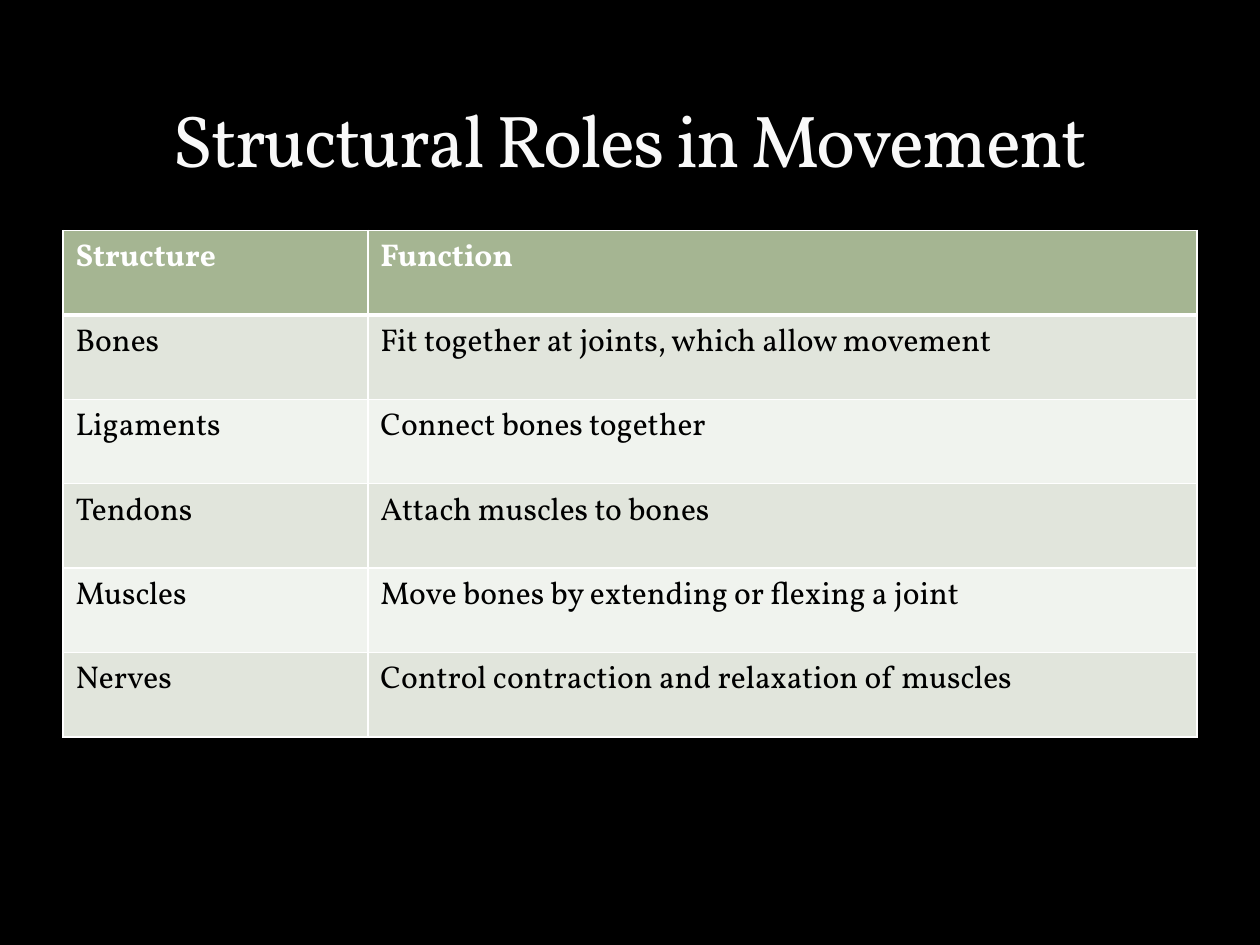
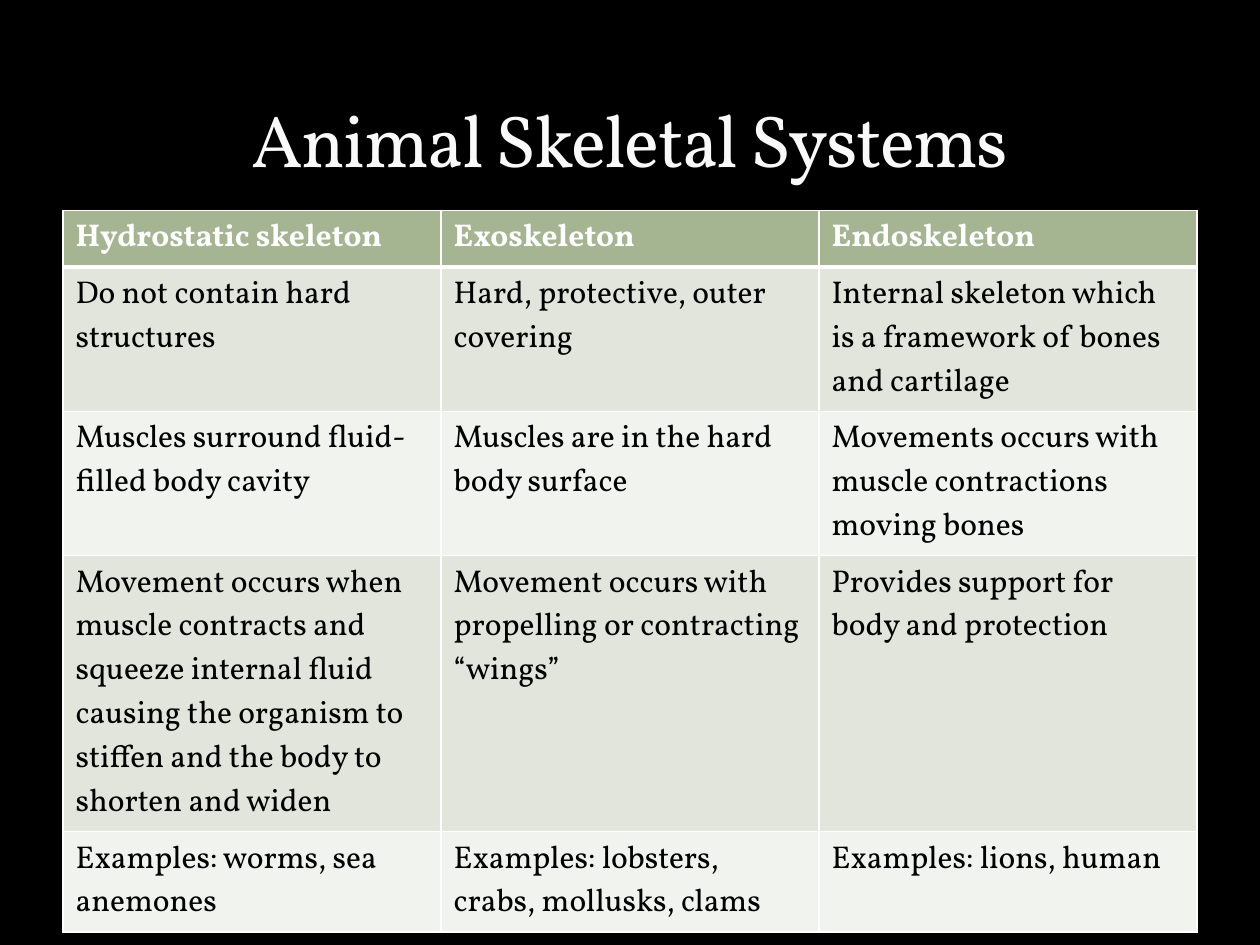
"""Builds two slides that set out movement structures and skeletal systems in tables."""
from dataclasses import dataclass

from lxml.etree import SubElement
from pptx import Presentation
from pptx.dml.color import RGBColor as Color
from pptx.enum.text import MSO_ANCHOR as Anchor, MSO_AUTO_SIZE as AutoSize, PP_ALIGN as Align
from pptx.oxml.ns import qn
from pptx.util import Inches, Pt

SLIDES = [
    {
        "title": "Structural Roles in Movement",
        "top": 1.83,
        "row_height": 0.67,
        "columns": (2.42, 6.58),
        "rows": [
            ("Structure", "Function"),
            ("Bones", "Fit together at joints, which allow movement"),
            ("Ligaments", "Connect bones together"),
            ("Tendons", "Attach muscles to bones"),
            ("Muscles", "Move bones by extending or flexing a joint"),
            ("Nerves", "Control contraction and relaxation of muscles"),
        ],
    },
    {
        "title": "Animal Skeletal Systems",
        "top": 1.67,
        "row_height": 0.41,
        "columns": (3, 3, 3),
        "rows": [
            ("Hydrostatic skeleton", "Exoskeleton", "Endoskeleton"),
            (
                "Do not contain hard structures",
                "Hard, protective, outer covering",
                "Internal skeleton which is a framework of bones and cartilage",
            ),
            (
                "Muscles surround fluid-filled body cavity",
                "Muscles are in the hard body surface",
                "Movements occurs with muscle contractions moving bones",
            ),
            (
                "Movement occurs when muscle contracts and squeeze internal fluid "
                "causing the organism to stiffen and the body to shorten and widen",
                "Movement occurs with propelling or contracting “wings”",
                "Provides support for body and protection",
            ),
            (
                "Examples: worms, sea anemones",
                "Examples: lobsters, crabs, mollusks, clams",
                "Examples: lions, human",
            ),
        ],
    },
]


@dataclass(frozen=True)
class Theme:
    """Colours, type and measures that both slides share."""
    font: str = "Vollkorn"
    title_size: int = 42
    cell_size: int = 18
    background: str = "000000"
    title: str = "F9F9F9"
    header_text: str = "FFFFFF"
    body_text: str = "000000"
    header_fill: str = "A5B592"
    bands: tuple = ("E1E5DC", "F0F3EE")
    border: str = "FFFFFF"
    thin: int = 1
    thick: int = 3
    width: float = 10
    height: float = 7.5
    margin: float = 0.5
    title_top: float = 0.17
    title_height: float = 1.33


THEME = Theme()
CONTENT_WIDTH = THEME.width - 2 * THEME.margin


def style_span(span, size, color, bold=False):
    """Format one run of text."""
    span.font.name = THEME.font
    span.font.size = Pt(size)
    span.font.bold = bold
    span.font.color.rgb = Color.from_string(color)


def add_title(page, text):
    """Fill and place the title placeholder."""
    box = page.shapes.title
    box.left, box.top = Inches(THEME.margin), Inches(THEME.title_top)
    box.width, box.height = Inches(CONTENT_WIDTH), Inches(THEME.title_height)
    frame = box.text_frame
    frame.text = text
    frame.auto_size = AutoSize.NONE
    frame.vertical_anchor = Anchor.BOTTOM
    para = frame.paragraphs[0]
    para.alignment = Align.CENTER
    span = para.runs[0]
    style_span(span, THEME.title_size, THEME.title)
    span.font._element.set("spc", "-100")


def add_borders(cell, top, bottom):
    """Draw the four borders of a cell, with widths in points."""
    properties = cell._tc.get_or_add_tcPr()
    sides = (("L", THEME.thin), ("R", THEME.thin), ("T", top), ("B", bottom))
    for position, (side, width) in enumerate(sides):
        line = SubElement(properties, qn(f"a:ln{side}"), w=str(Pt(width)))
        fill = SubElement(line, qn("a:solidFill"))
        SubElement(fill, qn("a:srgbClr"), val=THEME.border)
        properties.insert(position, line)


def style_cell(cell, text, row_index):
    """Write a cell and format it as header or banded body."""
    is_header = row_index == 0
    cell.text = text
    span = cell.text_frame.paragraphs[0].runs[0]
    style_span(span, THEME.cell_size, THEME.header_text if is_header else THEME.body_text, is_header)
    cell.fill.solid()
    fill = THEME.header_fill if is_header else THEME.bands[(row_index - 1) % 2]
    cell.fill.fore_color.rgb = Color.from_string(fill)
    add_borders(
        cell,
        top=THEME.thick if row_index == 1 else THEME.thin,
        bottom=THEME.thick if is_header else THEME.thin,
    )


def add_grid(page, content):
    """Add the table of a slide."""
    rows, columns = content["rows"], content["columns"]
    table = page.shapes.add_table(
        len(rows), len(columns), Inches(THEME.margin), Inches(content["top"]),
        Inches(CONTENT_WIDTH), Inches(content["row_height"] * len(rows)),
    ).table
    for column, width in zip(table.columns, columns):
        column.width = Inches(width)
    for row_index, texts in enumerate(rows):
        for column_index, text in enumerate(texts):
            style_cell(table.cell(row_index, column_index), text, row_index)


def main():
    """Build and save the deck."""
    deck = Presentation()
    deck.slide_width, deck.slide_height = Inches(THEME.width), Inches(THEME.height)
    backdrop = deck.slide_master.background.fill
    backdrop.solid()
    backdrop.fore_color.rgb = Color.from_string(THEME.background)
    title_only = deck.slide_layouts.get_by_name("Title Only")
    for content in SLIDES:
        page = deck.slides.add_slide(title_only)
        add_title(page, content["title"])
        add_grid(page, content)
    deck.save("out.pptx")


if __name__ == "__main__":
    main()
